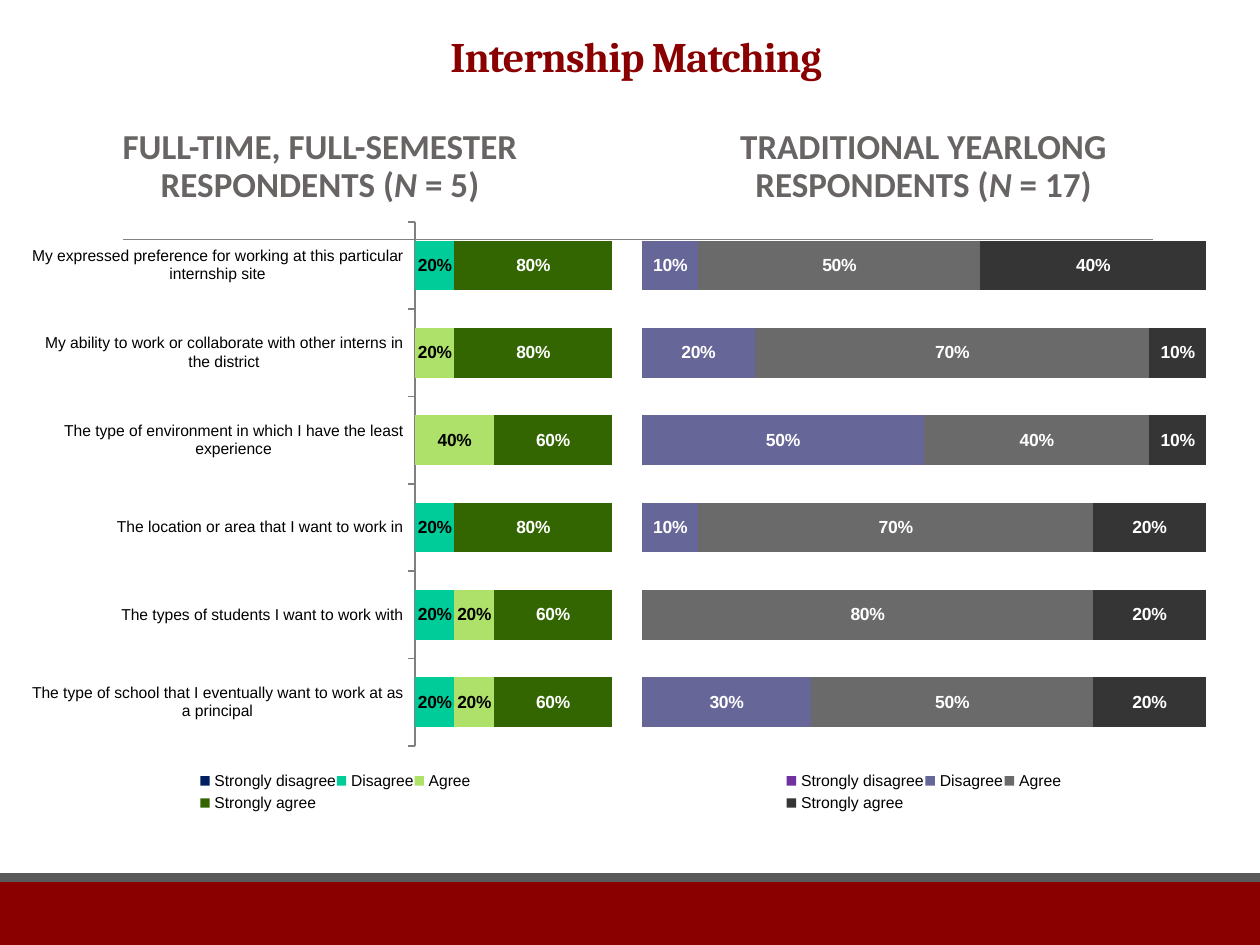
"""Build the Internship Matching slide with two stacked bar charts."""
from lxml.etree import SubElement
from pptx import Presentation
from pptx.chart.data import CategoryChartData
from pptx.dml.color import RGBColor
from pptx.enum.chart import XL_CHART_TYPE, XL_LABEL_POSITION, XL_LEGEND_POSITION, XL_TICK_MARK
from pptx.enum.shapes import MSO_CONNECTOR, MSO_SHAPE
from pptx.enum.text import MSO_ANCHOR, PP_ALIGN
from pptx.oxml.ns import qn
from pptx.util import Emu, Pt

WIDTH, HEIGHT = 1260, 945
TITLE = "Internship Matching"
TITLE_BOX = (116, 21, 1040, 66)
BANDS = [((0, 882, WIDTH, 63), "8A0000"), ((0, 873, WIDTH, 9), "595959")]
RULE = (123, 239, 1153, 239)
ANSWERS = ["Strongly disagree", "Disagree", "Agree", "Strongly agree"]
QUESTIONS = [
    "The type of school that I eventually want to work at as a principal",
    "The types of students I want to work with",
    "The location or area that I want to work in",
    "The type of environment in which I have the least experience",
    "My ability to work or collaborate with other interns in the district",
    "My expressed preference for working at this particular internship site",
]
PANELS = [
    {
        "heading": ("FULL-TIME, FULL-SEMESTER RESPONDENTS (", "N", " = 5)"),
        "heading_box": (10, 116, 620, 102),
        "chart_box": (32, 210, 592, 609),
        "plot_box": (413, 222, 199, 524),
        "legend_box": (195, 768, 275, 48),
        "categories": QUESTIONS,
        "show_questions": True,
        "colors": ["002060", "00CC99", "AEE169", "336600"],
        "label_colors": ["000000", "000000", "000000", "FFFFFF"],
        "values": [
            (0, 0, 0, 0, 0, 0),
            (0.2, 0.2, 0.2, 0, 0, 0.2),
            (0, 0.2, 0, 0.4, 0.2, 0),
            (0.6, 0.6, 0.8, 0.6, 0.8, 0.8),
        ],
    },
    {
        "heading": ("TRADITIONAL YEARLONG RESPONDENTS (", "N", " = 17)"),
        "heading_box": (640, 116, 567, 102),
        "chart_box": (630, 210, 588, 609),
        "plot_box": (642, 222, 564, 524),
        "legend_box": (785, 768, 278, 48),
        "categories": ["1", "2", "3", "4", "5", "6"],
        "show_questions": False,
        "colors": ["7030A0", "666699", "6A6A6A", "353535"],
        "label_colors": ["FFFFFF"] * 4,
        "values": [
            (0, 0, 0, 0, 0, 0),
            (0.3, 0, 0.1, 0.5, 0.2, 0.1),
            (0.5, 0.8, 0.7, 0.4, 0.7, 0.5),
            (0.2, 0.2, 0.2, 0.1, 0.1, 0.4),
        ],
    },
]
PANELS[0]["values"][2] = (0.2, 0.2, 0, 0.4, 0.2, 0)


def px(*lengths):
    return [Emu(round(length * 914400 / 126)) for length in lengths]


def rgb(color):
    return RGBColor.from_string(color)


def style_font(font, size, color, name="Arial", bold=False):
    font.size, font.name, font.bold = Pt(size), name, bold
    font.color.rgb = rgb(color)


def write(shape, parts, *, size, color, font, anchor, line_spacing, italics=(), tracking=0):
    frame = shape.text_frame
    frame.word_wrap = True
    frame.vertical_anchor = anchor
    paragraph = frame.paragraphs[0]
    paragraph.alignment = PP_ALIGN.CENTER
    paragraph.line_spacing = line_spacing
    for part in parts:
        run = paragraph.add_run()
        run.text = part
        style_font(run.font, size, color, font, bold=True)
        run.font.italic = part in italics
        if tracking:
            run.font._element.set("spc", str(tracking))


def place(parent, index, box, chart_box, inner=False):
    for old in parent.findall(qn("c:layout")):
        parent.remove(old)
    layout = SubElement(parent, qn("c:layout"))
    parent.insert(index, layout)
    manual = SubElement(layout, qn("c:manualLayout"))
    left, top, width, height = chart_box
    settings = {"layoutTarget": "inner"} if inner else {}
    settings |= {
        "xMode": "edge",
        "yMode": "edge",
        "x": round((box[0] - left) / width, 4),
        "y": round((box[1] - top) / height, 4),
        "w": round(box[2] / width, 4),
        "h": round(box[3] / height, 4),
    }
    for name, value in settings.items():
        SubElement(manual, qn(f"c:{name}")).set("val", str(value))


def add_bars(slide, panel):
    data = CategoryChartData(number_format="0%")
    data.categories = panel["categories"]
    for answer, values in zip(ANSWERS, panel["values"]):
        data.add_series(answer, values)
    chart_box = panel["chart_box"]
    chart = slide.shapes.add_chart(XL_CHART_TYPE.BAR_STACKED_100, *px(*chart_box), data).chart
    style_font(chart.font, 9, "000000")
    chart.has_title = False
    chart.has_legend = True
    chart.legend.position = XL_LEGEND_POSITION.BOTTOM
    chart.legend.include_in_layout = False
    place(chart.legend._element, 1, panel["legend_box"], chart_box)
    place(chart._chartSpace.chart.plotArea, 0, panel["plot_box"], chart_box, inner=True)

    chart.value_axis.visible = False
    chart.value_axis.has_major_gridlines = False
    chart.value_axis.minimum_scale, chart.value_axis.maximum_scale = 0, 1
    axis = chart.category_axis
    axis.visible = panel["show_questions"]
    axis.major_tick_mark = XL_TICK_MARK.OUTSIDE
    axis.format.line.color.rgb = rgb("808080")
    axis.format.line.width = Pt(1)

    plot = chart.plots[0]
    plot.gap_width, plot.overlap = 75, 100
    for series, color, label_color in zip(plot.series, panel["colors"], panel["label_colors"]):
        series.format.fill.solid()
        series.format.fill.fore_color.rgb = rgb(color)
        labels = series.data_labels
        labels.show_value = True
        labels.position = XL_LABEL_POSITION.CENTER
        labels.number_format, labels.number_format_is_linked = "0%;;", False
        style_font(labels.font, 10, label_color, bold=True)


def main():
    presentation = Presentation()
    presentation.slide_width, presentation.slide_height = px(WIDTH, HEIGHT)
    slide = presentation.slides.add_slide(presentation.slide_layouts[5])
    for box, color in BANDS:
        band = slide.shapes.add_shape(MSO_SHAPE.RECTANGLE, *px(*box))
        band.shadow.inherit = False
        band.fill.solid()
        band.fill.fore_color.rgb = rgb(color)
        band.line.fill.background()
    rule = slide.shapes.add_connector(MSO_CONNECTOR.STRAIGHT, *px(*RULE))
    rule.line.color.rgb = rgb("808080")
    rule.line.width = Pt(0.5)
    SubElement(rule._element.spPr, qn("a:effectLst"))

    title = slide.shapes.title
    title.left, title.top, title.width, title.height = px(*TITLE_BOX)
    write(title, [TITLE], size=24, color="8A0000", font="Cambria",
          anchor=MSO_ANCHOR.BOTTOM, line_spacing=0.85, tracking=-50)
    for panel in PANELS:
        heading = slide.shapes.add_textbox(*px(*panel["heading_box"]))
        write(heading, panel["heading"], size=20, color="696464", font="Calibri",
              anchor=MSO_ANCHOR.MIDDLE, line_spacing=0.9, italics=("N",))
        add_bars(slide, panel)
    presentation.save("out.pptx")


if __name__ == "__main__":
    main()
